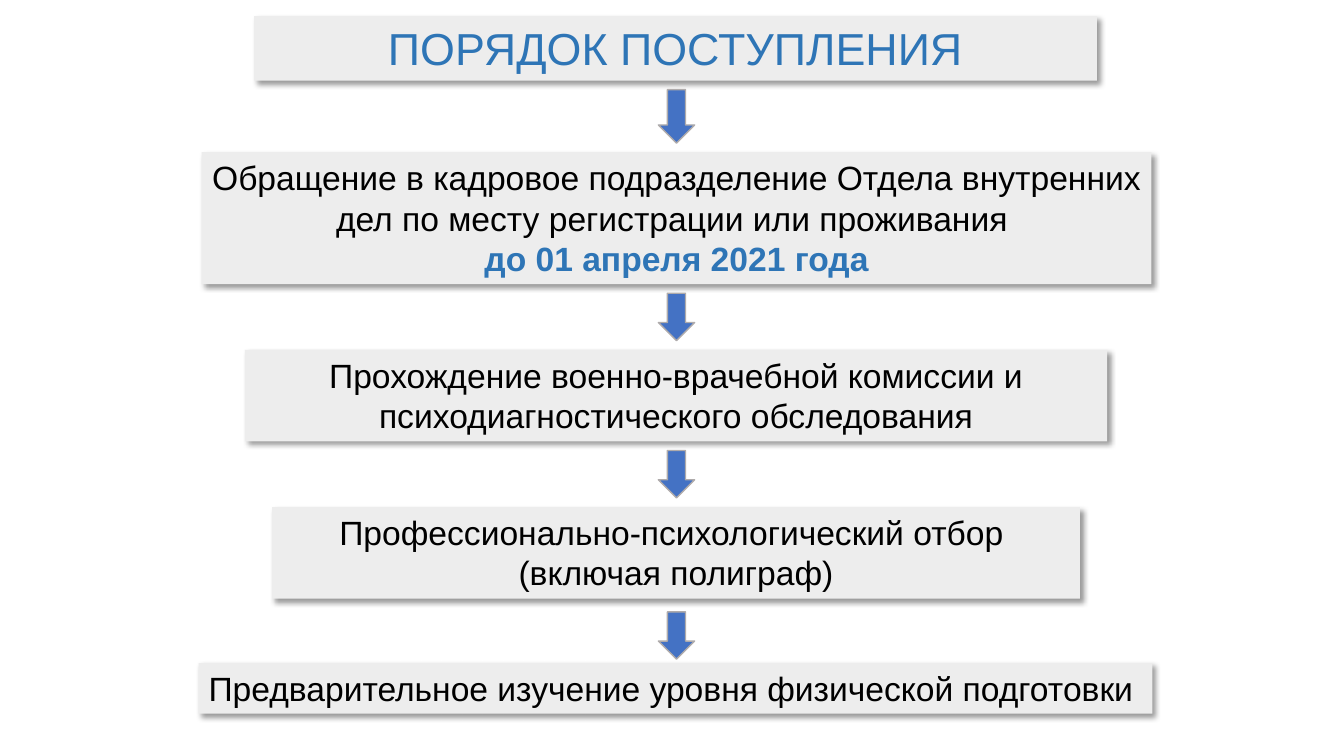
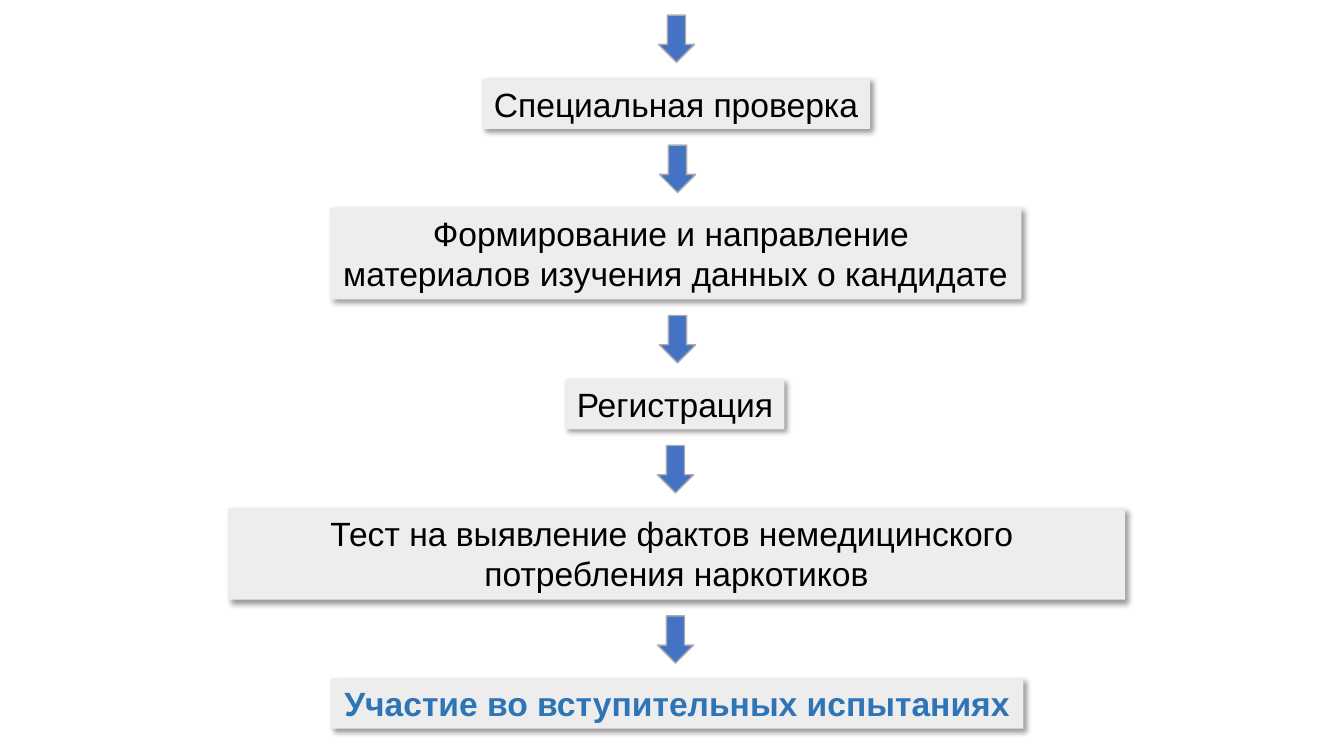
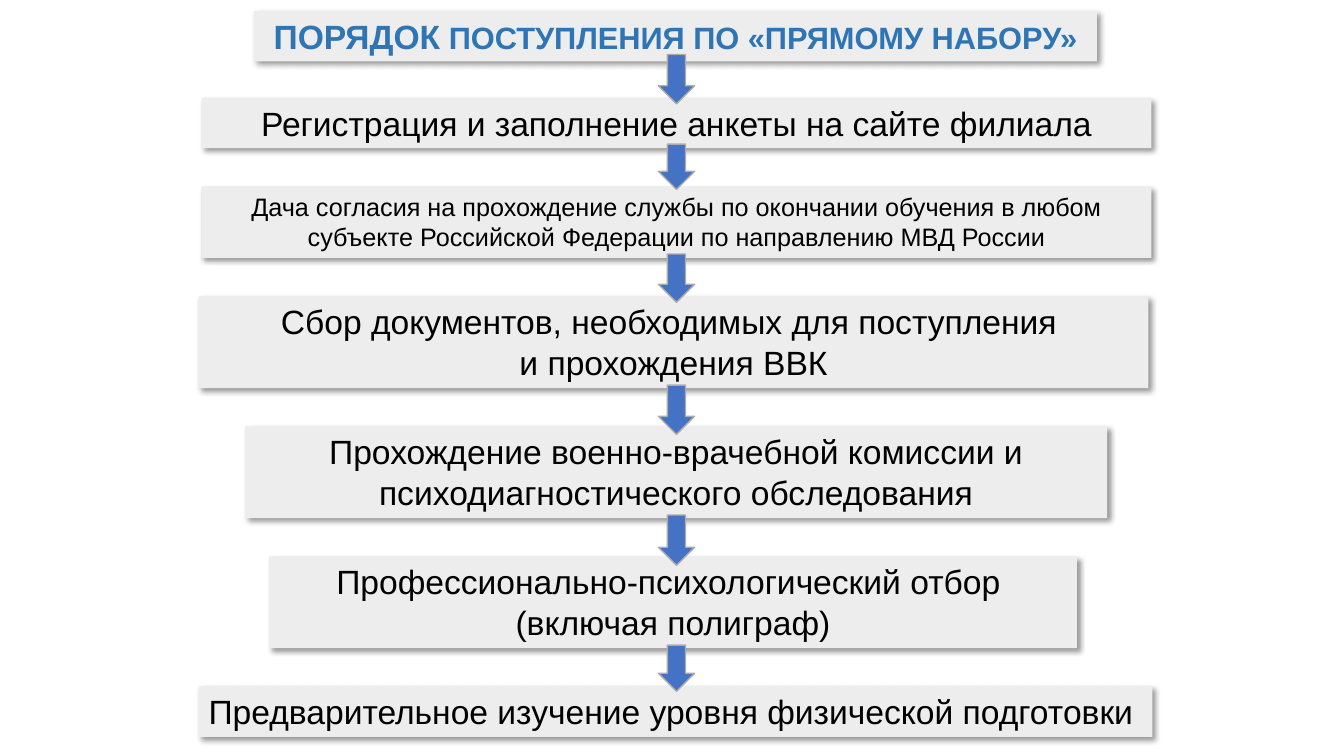
from dataclasses import dataclass

from lxml import etree
from pptx import Presentation
from pptx import util as u
from pptx.dml.color import RGBColor
from pptx.enum import shapes, text
from pptx.oxml.ns import qn


@dataclass(frozen=True)
class Theme:
    font: str = "Arial"
    box: str = "EDEDED"
    arrow: str = "4472C4"
    arrow_edge: str = "AFABAB"
    shadow: str = "000000"
    ink: str = "000000"
    accent: str = "2E75B6"
    title: int = 32
    body: int = 24
    subtitle: int = 22
    small: int = 18


THEME = Theme()
PX = 9144
SLIDE_SIZE = (1333, 750)
ARROW_WIDTH = 36

BODY = (THEME.body, THEME.ink, False)
SMALL = (THEME.small, THEME.ink, False)
TITLE = (THEME.title, THEME.accent, False)
STRONG = (THEME.body, THEME.accent, True)
SUBTITLE = (THEME.subtitle, THEME.accent, True)

CENTER, LEFT = text.PP_ALIGN.CENTER, text.PP_ALIGN.LEFT
WRAP, FREE = (CENTER, True), (CENTER, False)
FREE_LEFT = (LEFT, False)

MEDICAL = [[("Прохождение военно-врачебной комиссии и психодиагностического обследования", BODY)]]
SELECTION = [
    [("Профессионально-психологический отбор ", BODY)],
    [("(включая полиграф)", BODY)],
]
FITNESS = [[("Предварительное изучение уровня физической подготовки", BODY)]]

SLIDES = [
    {
        "steps": [
            ((252, 16, 836, 64), WRAP, [[("ПОРЯДОК ПОСТУПЛЕНИЯ", TITLE)]]),
            ((200, 151, 942, 131), WRAP, [
                [("Обращение в кадровое подразделение Отдела внутренних дел "
                  "по месту регистрации или проживания ", BODY)],
                [("до 01 апреля 2021 года", STRONG)],
            ]),
            ((243, 347, 855, 91), WRAP, MEDICAL),
            ((270, 503, 801, 91), WRAP, SELECTION),
            ((197, 658, 946, 50), FREE_LEFT, FITNESS),
        ],
        "arrows": [(653, 89, 53), (653, 291, 47), (653, 447, 47), (653, 607, 47)],
    },
    {
        "steps": [
            ((478, 78, 385, 50), FREE, [[("Специальная проверка", BODY)]]),
            ((327, 206, 686, 91), FREE, [
                [("Формирование и направление ", BODY)],
                [("материалов изучения данных о кандидате", BODY)],
            ]),
            ((561, 376, 217, 50), FREE, [[("Регистрация", BODY)]]),
            ((226, 504, 890, 91), WRAP, [
                [("Тест на выявление фактов немедицинского ", BODY)],
                [("потребления наркотиков", BODY)],
            ]),
            ((328, 673, 687, 50), FREE, [[("Участие во вступительных испытаниях", STRONG)]]),
        ],
        "arrows": [(653, 15, 47), (654, 144, 47), (654, 313, 47), (652, 442, 47), (652, 611, 47)],
    },
    {
        "steps": [
            ((252, 11, 836, 50), WRAP, [
                [("ПОРЯДОК", STRONG), (" ПОСТУПЛЕНИЯ ПО «ПРЯМОМУ НАБОРУ»", SUBTITLE)],
            ]),
            ((200, 97, 942, 50), WRAP, [[("Регистрация и заполнение анкеты на сайте филиала", BODY)]]),
            ((200, 185, 942, 71), WRAP, [
                [("Дача согласия на прохождение службы по окончании обучения в любом "
                  "субъекте Российской Федерации по направлению МВД России", SMALL)],
            ]),
            ((197, 294, 942, 91), WRAP, [
                [("Сбор документов, необходимых для поступления ", BODY)],
                [("и прохождения ВВК", BODY)],
            ]),
            ((243, 423, 855, 91), WRAP, MEDICAL),
            ((267, 552, 801, 91), WRAP, SELECTION),
            ((197, 681, 946, 50), FREE_LEFT, FITNESS),
        ],
        "arrows": [(653, 54, 49), (653, 143, 45), (653, 252, 48),
                   (653, 382, 49), (653, 511, 50), (653, 640, 46)],
    },
]


def px(*lengths):
    return [u.Emu(length * PX) for length in lengths]


def paint(fill, color):
    fill.solid()
    fill.fore_color.rgb = RGBColor.from_string(color)


def cast_shadow(step):
    step.shadow.inherit = False
    effects = step._element.spPr.find(qn("a:effectLst"))
    outer = etree.SubElement(effects, qn("a:outerShdw"), blurRad=str(u.Pt(4)),
                             dist=str(u.Pt(3)), dir="2700000", algn="tl", rotWithShape="0")
    color = etree.SubElement(outer, qn("a:srgbClr"), val=THEME.shadow)
    etree.SubElement(color, qn("a:alpha"), val="40000")


def add_step(slide, place, layout, paragraphs):
    step = slide.shapes.add_textbox(*px(*place))
    paint(step.fill, THEME.box)
    cast_shadow(step)
    frame = step.text_frame
    align, frame.word_wrap = layout
    frame.auto_size = text.MSO_AUTO_SIZE.SHAPE_TO_FIT_TEXT
    for index, pieces in enumerate(paragraphs):
        paragraph = frame.add_paragraph() if index else frame.paragraphs[0]
        paragraph.alignment = align
        for words, (size, color, bold) in pieces:
            run = paragraph.add_run()
            run.text = words
            run.font.name = THEME.font
            run.font.size = u.Pt(size)
            run.font.bold = bold
            run.font.color.rgb = RGBColor.from_string(color)


def add_arrow(slide, left, top, height):
    arrow = slide.shapes.add_shape(shapes.MSO_SHAPE.DOWN_ARROW, *px(left, top, ARROW_WIDTH, height))
    arrow.shadow.inherit = False
    paint(arrow.fill, THEME.arrow)
    paint(arrow.line.fill, THEME.arrow_edge)
    arrow.line.width = u.Pt(1)


def main():
    deck = Presentation()
    deck.slide_width, deck.slide_height = px(*SLIDE_SIZE)
    for content in SLIDES:
        slide = deck.slides.add_slide(deck.slide_layouts[6])
        for step in content["steps"]:
            add_step(slide, *step)
        for arrow in content["arrows"]:
            add_arrow(slide, *arrow)
    deck.save("out.pptx")


if __name__ == "__main__":
    main()
